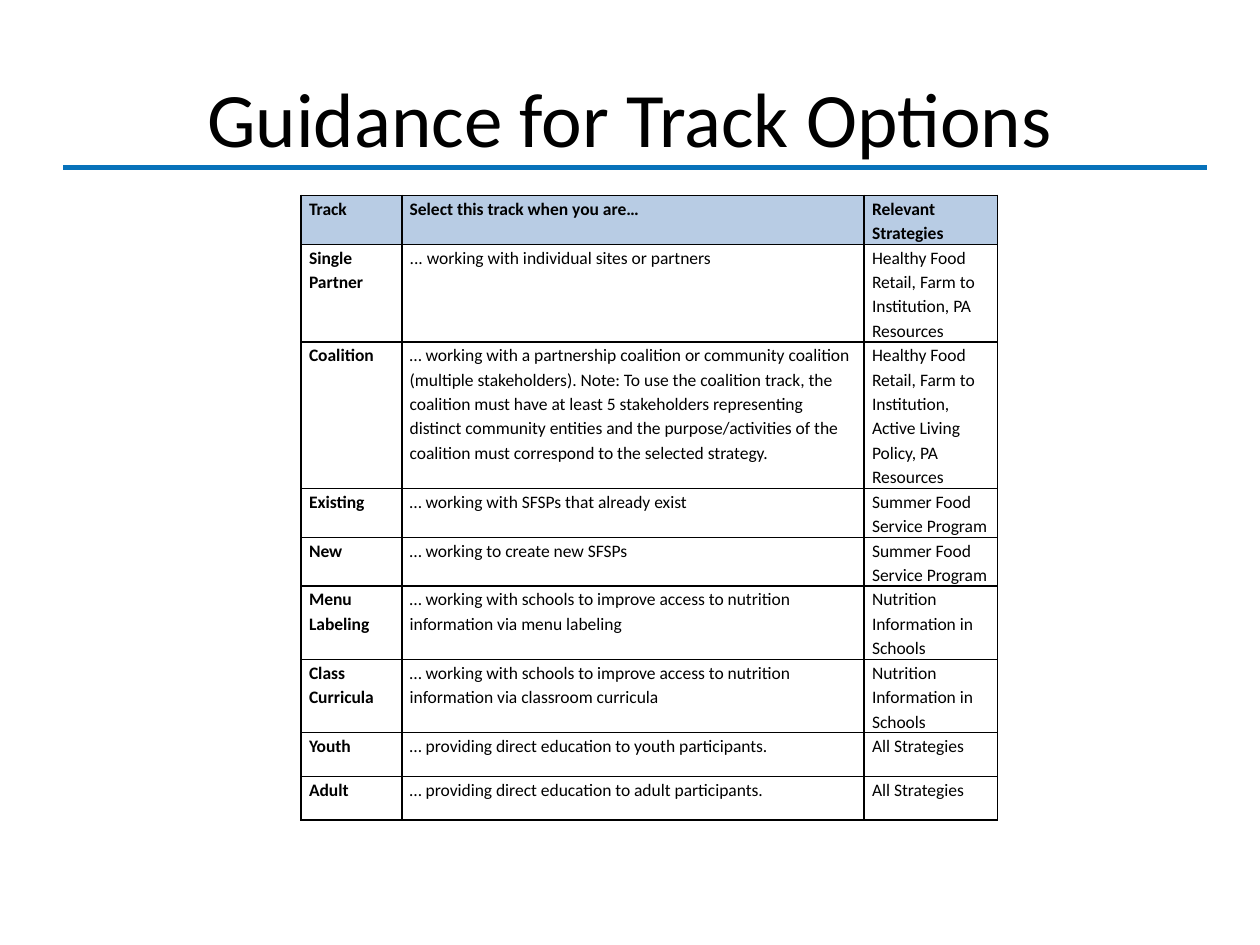
from dataclasses import dataclass

from lxml import etree
from pptx import Presentation
from pptx import util as u
from pptx.dml.color import RGBColor
from pptx.enum import shapes, text
from pptx.oxml import ns

BLACK = RGBColor(0x00, 0x00, 0x00)
RULE_BLUE = RGBColor(0x07, 0x72, 0xBA)
HEADER_BLUE = RGBColor(0xB8, 0xCC, 0xE4)
FONT = "Calibri"
LINE_HEIGHT = 0.49
COLUMN_WIDTHS = (2.03, 9.32, 2.69)
CELL_FORMAT = {
    "margin_left": u.Cm(0.16),
    "margin_right": u.Cm(0.16),
    "margin_top": 0,
    "margin_bottom": 0,
    "vertical_anchor": text.MSO_ANCHOR.TOP,
}


@dataclass(frozen=True)
class Track:
    name: str
    condition: str
    strategies: str
    lines: float

    @property
    def texts(self) -> tuple[str, str, str]:
        return self.name, self.condition, self.strategies


TRACKS = (
    Track("Track", "Select this track when you are…", "Relevant Strategies", 2),
    Track("Single Partner", "... working with individual sites or partners",
          "Healthy Food Retail, Farm to Institution, PA Resources", 4),
    Track("Coalition",
          "… working with a partnership coalition or community coalition "
          "(multiple stakeholders). Note: To use the coalition track, the "
          "coalition must have at least 5 stakeholders representing distinct "
          "community entities and the purpose/activities of the coalition "
          "must correspond to the selected strategy.",
          "Healthy Food Retail, Farm to Institution, Active Living Policy, "
          "PA Resources", 6),
    Track("Existing", "… working with SFSPs that already exist",
          "Summer Food Service Program", 2),
    Track("New", "… working to create new SFSPs",
          "Summer Food Service Program", 2),
    Track("Menu Labeling",
          "… working with schools to improve access to nutrition information "
          "via menu labeling", "Nutrition Information in Schools", 3),
    Track("Class Curricula",
          "… working with schools to improve access to nutrition information "
          "via classroom curricula", "Nutrition Information in Schools", 3),
    Track("Youth", "… providing direct education to youth participants.",
          "All Strategies", 1.8),
    Track("Adult", "… providing direct education to adult participants.",
          "All Strategies", 1.8),
)


def apply_format(target, values: dict) -> None:
    for name, value in values.items():
        setattr(target, name, value)


def format_font(font, size: float, bold: bool = False) -> None:
    apply_format(font, {"name": FONT, "size": u.Pt(size), "bold": bold})
    font.color.rgb = BLACK


def add_borders(cell) -> None:
    properties = cell._tc.get_or_add_tcPr()
    for side in ("a:lnL", "a:lnR", "a:lnT", "a:lnB"):
        border = etree.SubElement(properties, ns.qn(side), w=str(u.Pt(1)))
        fill = etree.SubElement(border, ns.qn("a:solidFill"))
        etree.SubElement(fill, ns.qn("a:srgbClr"), val=str(BLACK))


def fill_cell(cell, content: str, bold: bool, header: bool) -> None:
    apply_format(cell, CELL_FORMAT)
    add_borders(cell)
    if header:
        cell.fill.solid()
        cell.fill.fore_color.rgb = HEADER_BLUE
    else:
        cell.fill.background()
    paragraph = cell.text_frame.paragraphs[0]
    paragraph.line_spacing = 1.15
    run = paragraph.add_run()
    run.text = content
    format_font(run.font, 10, bold)


def add_title(slide) -> None:
    title = slide.shapes.title
    apply_format(title, {"left": u.Cm(1.27), "top": u.Cm(0.76),
                         "width": u.Cm(22.86), "height": u.Cm(3.18)})
    title.text_frame.vertical_anchor = text.MSO_ANCHOR.MIDDLE
    paragraph = title.text_frame.paragraphs[0]
    paragraph.alignment = text.PP_ALIGN.CENTER
    run = paragraph.add_run()
    run.text = "Guidance for Track Options"
    format_font(run.font, 44)


def add_title_rule(slide) -> None:
    rule = slide.shapes.add_connector(
        shapes.MSO_CONNECTOR.STRAIGHT,
        u.Cm(1.27), u.Cm(3.38), u.Cm(24.33), u.Cm(3.38))
    rule.line.color.rgb = RULE_BLUE
    rule.line.width = u.Pt(3)
    etree.SubElement(rule._element.spPr, ns.qn("a:effectLst"))


def add_track_table(slide) -> None:
    heights = [track.lines * LINE_HEIGHT for track in TRACKS]
    table = slide.shapes.add_table(
        len(TRACKS), len(COLUMN_WIDTHS), u.Cm(6.07), u.Cm(3.94),
        u.Cm(sum(COLUMN_WIDTHS)), u.Cm(sum(heights))).table
    table.horz_banding = False
    for column, width in zip(table.columns, COLUMN_WIDTHS):
        column.width = u.Cm(width)
    for index, (row, track, height) in enumerate(
            zip(table.rows, TRACKS, heights)):
        row.height = u.Cm(height)
        header = index == 0
        for position, (cell, content) in enumerate(zip(row.cells, track.texts)):
            fill_cell(cell, content, header or position == 0, header)


def main() -> None:
    presentation = Presentation()
    presentation.slide_width = u.Cm(25.4)
    presentation.slide_height = u.Cm(19.05)
    slide = presentation.slides.add_slide(presentation.slide_layouts[5])
    add_title_rule(slide)
    add_title(slide)
    add_track_table(slide)
    presentation.save("out.pptx")


if __name__ == "__main__":
    main()
